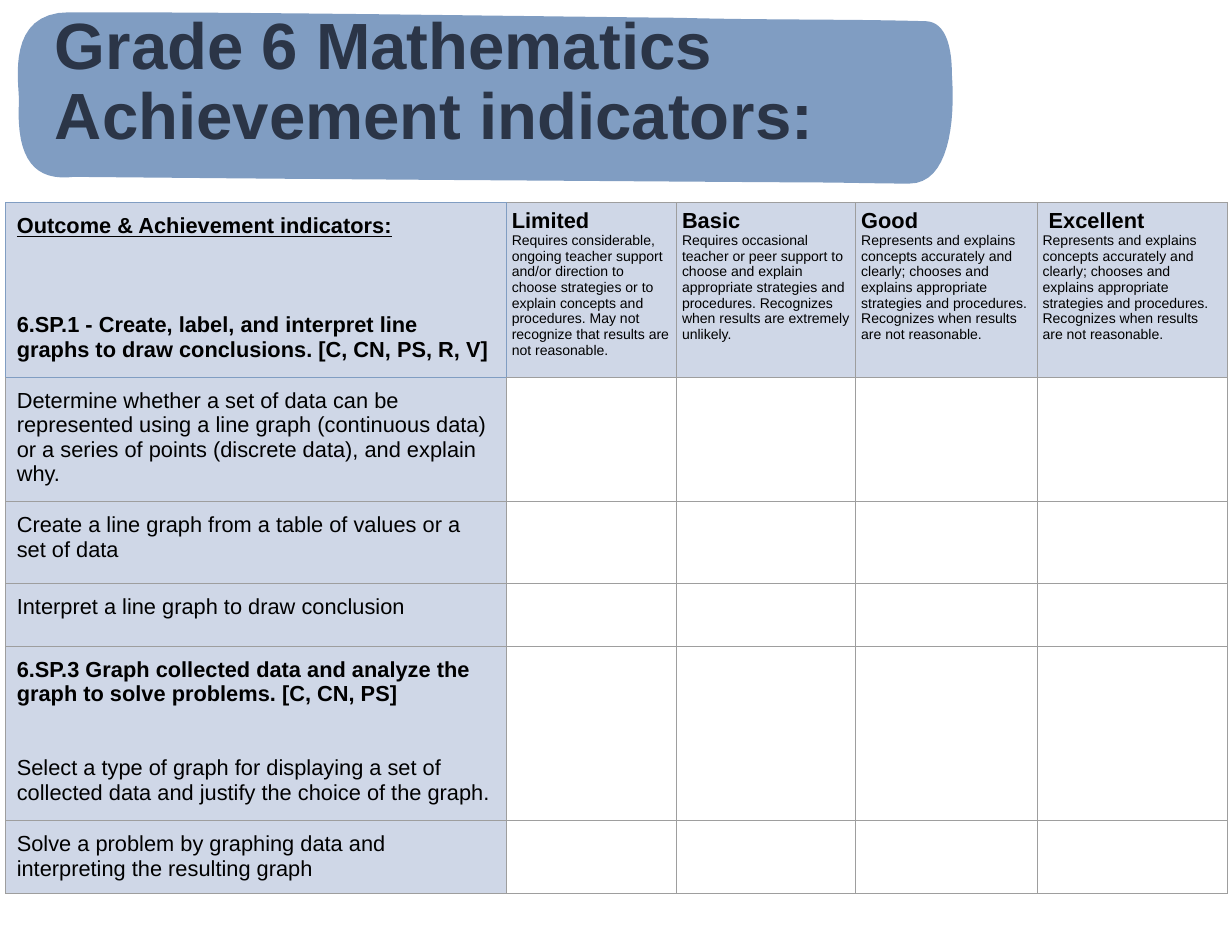
from dataclasses import dataclass

from lxml.etree import SubElement
from pptx import Presentation
from pptx.dml.color import RGBColor
from pptx.enum.text import MSO_ANCHOR, MSO_AUTO_SIZE, PP_ALIGN
from pptx.oxml.ns import qn
from pptx.util import Inches, Pt

FONT = "Arial"
BLUE = RGBColor(0x80, 0x9D, 0xC2)
NAVY = RGBColor(0x2B, 0x35, 0x47)
PALE = RGBColor(0xCF, 0xD7, 0xE7)
GREY = RGBColor(0x9E, 0x9E, 0x9E)
BLACK = RGBColor(0, 0, 0)


@dataclass
class Para:
    text: str
    size: float = 14
    bold: bool = False
    underline: bool = False
    before: float = 0


@dataclass
class Level:
    name: str
    description: str


# Banner outline: each curve holds two control points and an end point
BANNER_START = (8.5, 0.67)
BANNER_CURVES = [
    ((8.5, 0.43), (8.45, 0.2), (8.27, 0.19)),
    ((7.54, 0.17), (6.8, 0.18), (6.07, 0.16)),
    ((4.17, 0.14), (2.52, 0.11), (0.62, 0.11)),
    ((0.05, 0.11), (0.17, 0.73), (0.17, 0.9)),
    ((0.14, 1.44), (0.32, 1.62), (0.66, 1.58)),
    ((2.86, 1.6), (2.86, 1.6), (7.25, 1.63)),
    ((7.54, 1.63), (7.83, 1.64), (8.12, 1.64)),
    ((8.47, 1.64), (8.53, 1.1), (8.5, 0.67)),
]
CURVE_STEPS = 16

COLUMNS = [4.47, 1.52, 1.6, 1.62, 1.7]
ROWS = [1.56, 1.11, 0.73, 0.56, 1.56, 0.65]

ACCURATE = ("Represents and explains concepts accurately and clearly; chooses and explains "
            "appropriate strategies and procedures. Recognizes when results are not reasonable.")
LEVELS = [
    Level("Limited", "Requires considerable, ongoing teacher support and/or direction to choose "
          "strategies or to explain concepts and procedures. May not recognize that results are "
          "not reasonable."),
    Level("Basic", "Requires occasional teacher or peer support to choose and explain appropriate "
          "strategies and procedures. Recognizes when results are extremely unlikely."),
    Level("Good", ACCURATE),
    Level(" Excellent", ACCURATE),
]
INDICATORS = [
    [Para("Outcome & Achievement indicators:", bold=True, underline=True),
     Para("6.SP.1 - Create, label, and interpret line graphs to draw conclusions. "
          "[C, CN, PS, R, V]", bold=True, before=48)],
    [Para("Determine whether a set of data can be represented using a line graph (continuous "
          "data) or a series of points (discrete data), and explain why.")],
    [Para("Create a line graph from a table of values or a set of data")],
    [Para("Interpret a line graph to draw conclusion")],
    [Para("6.SP.3 Graph collected data and analyze the graph to solve problems. [C, CN, PS]",
          bold=True),
     Para("Select a type of graph for displaying a set of collected data and justify the choice "
          "of the graph.", before=32)],
    [Para("Solve a problem by graphing data and interpreting the resulting graph")],
]


def add_run(p, text: str, size: float, color: RGBColor, bold: bool, underline: bool = False) -> None:
    r = p.add_run()
    r.text = text
    f = r.font
    f.name, f.size, f.bold, f.underline = FONT, Pt(size), bold, underline
    f.color.rgb = color


def curve_points(p0: tuple, p1: tuple, p2: tuple, p3: tuple) -> list:
    points = []
    for i in range(1, CURVE_STEPS + 1):
        t = i / CURVE_STEPS
        u = 1 - t
        points.append(tuple(
            Inches(u**3 * a + 3 * u * u * t * b + 3 * u * t * t * c + t**3 * d)
            for a, b, c, d in zip(p0, p1, p2, p3)))
    return points


def add_banner(s):
    builder = s.shapes.build_freeform(*(Inches(v) for v in BANNER_START))
    start = BANNER_START
    for curve in BANNER_CURVES:
        builder.add_line_segments(curve_points(start, *curve), close=False)
        start = curve[-1]
    builder.add_line_segments([], close=True)
    sp = builder.convert_to_shape()
    sp.shadow.inherit = False
    sp.fill.solid()
    sp.fill.fore_color.rgb = BLUE
    sp.line.fill.background()
    return sp


def set_borders(cell, **colors: RGBColor) -> None:
    """Draw the four edges; the fill must be set afterwards to keep XML order."""
    tc_pr = cell._tc.get_or_add_tcPr()
    for side in "LRTB":
        ln = SubElement(tc_pr, qn(f"a:ln{side}"), w=str(Pt(0.75)))
        fill = SubElement(ln, qn("a:solidFill"))
        SubElement(fill, qn("a:srgbClr"), val=str(colors.get(side, GREY)))


def fill_cell(cell, paras: list[Para], margin: float) -> None:
    cell.fill.solid()
    cell.fill.fore_color.rgb = PALE
    cell.margin_left = cell.margin_right = Inches(margin)
    cell.margin_top = cell.margin_bottom = Inches(margin)
    tf = cell.text_frame
    for i, para in enumerate(paras):
        p = tf.add_paragraph() if i else tf.paragraphs[0]
        p.space_before = Pt(para.before)
        add_run(p, para.text, para.size, BLACK, para.bold, para.underline)


def add_rubric(s) -> None:
    frame = s.shapes.add_table(len(ROWS), len(COLUMNS), Inches(0.05), Inches(1.81),
                               Inches(sum(COLUMNS)), Inches(sum(ROWS)))
    table = frame.table
    table.first_row = table.horz_banding = False
    for column, width in zip(table.columns, COLUMNS):
        column.width = Inches(width)
    for row, height in zip(table.rows, ROWS):
        row.height = Inches(height)

    # The outcome cell has blue edges, shared with its neighbours
    blue_edges = {(0, 0): "LRTB", (0, 1): "L", (1, 0): "T"}
    for i in range(len(ROWS)):
        for j in range(len(COLUMNS)):
            cell = table.cell(i, j)
            set_borders(cell, **dict.fromkeys(blue_edges.get((i, j), ""), BLUE))
            if j == 0:
                fill_cell(cell, INDICATORS[i], 0.1)
            elif i == 0:
                level = LEVELS[j - 1]
                fill_cell(cell, [Para(level.name, bold=True), Para(level.description, 9)], 0.05)
            else:
                cell.fill.background()


def format_title(title) -> None:
    title.left, title.top = Inches(0.49), Inches(0.42)
    title.width, title.height = Inches(7.73), Inches(0.65)
    tf = title.text_frame
    tf.word_wrap = True
    tf.auto_size = MSO_AUTO_SIZE.NONE
    tf.vertical_anchor = MSO_ANCHOR.MIDDLE
    tf.margin_left = tf.margin_right = tf.margin_top = tf.margin_bottom = 0
    p = tf.paragraphs[0]
    p.alignment = PP_ALIGN.LEFT
    p.line_spacing = 0.9
    p.space_before = Pt(0)
    add_run(p, "Grade 6 Mathematics Achievement indicators:", 42, NAVY, True)


def main() -> None:
    prs = Presentation()
    prs.slide_width, prs.slide_height = Inches(11), Inches(8.5)
    s = prs.slides.add_slide(prs.slide_layouts[5])

    # Title on its banner
    title = s.shapes.title
    format_title(title)
    banner = add_banner(s)
    title.element.addprevious(banner.element)

    # Rubric table
    add_rubric(s)
    prs.save("out.pptx")


if __name__ == "__main__":
    main()
